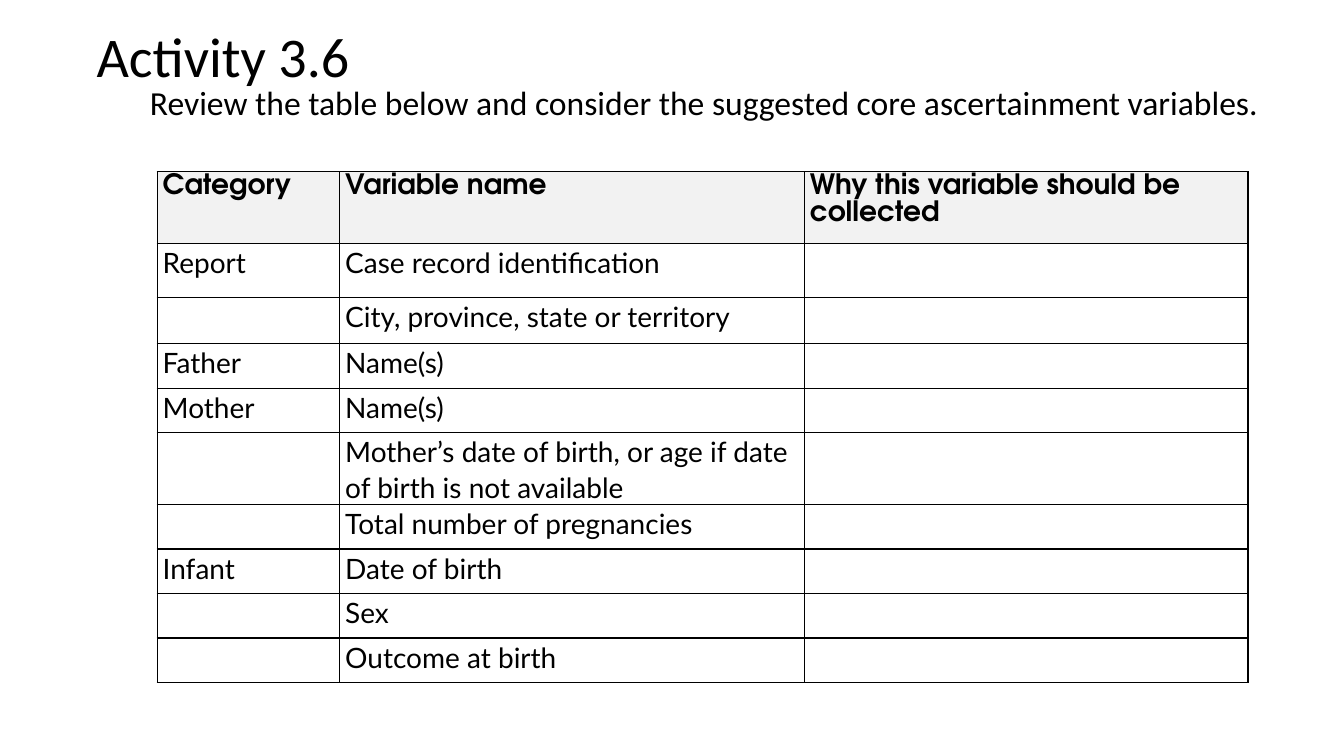
from pptx import Presentation
from pptx import util as u
from pptx.dml.color import RGBColor
from pptx.enum import text
from pptx.oxml import parse_xml
from pptx.oxml.ns import nsdecls

BODY_FONT, CELL_FONT, HEAD_FONT = "Calibri", "Lato", "TeX Gyre Adventor"
COL_WIDTHS = [4.6, 11.71, 11.18]
ROW_HEIGHTS = [0.89, 1.35, 1.17] + [1.12] * 7
HEADERS = ["Category", "Variable name", "Why this variable should be collected"]
VARIABLES = [
    ("Report", "Case record identification"),
    ("", "City, province, state or territory"),
    ("Father", "Name(s)"),
    ("Mother", "Name(s)"),
    ("", "Mother’s date of birth, or age if date of birth is not available"),
    ("", "Total number of pregnancies"),
    ("Infant", "Date of birth"),
    ("", "Sex"),
    ("", "Outcome at birth"),
]


def rgb(value):
    return RGBColor.from_string(value)


def write(tf, words, font, size, spacing, bold=False):
    p = tf.paragraphs[0]
    p.alignment = text.PP_ALIGN.LEFT
    p.line_spacing = spacing
    r = p.add_run()
    r.text = words
    r.font.name, r.font.size, r.font.bold = font, u.Pt(size), bold
    r.font.color.rgb = rgb("000000")
    return p


def set_borders(cell, color="000000", width=1):
    tc_pr = cell._tc.get_or_add_tcPr()
    for i, side in enumerate(("lnL", "lnR", "lnT", "lnB")):
        tc_pr.insert(i, parse_xml(
            f'<a:{side} {nsdecls("a")} w="{u.Pt(width)}"><a:solidFill>'
            f'<a:srgbClr val="{color}"/></a:solidFill></a:{side}>'))


def fill_cell(cell, words, header):
    cell.fill.solid()
    cell.fill.fore_color.rgb = rgb("F2F2F2" if header else "FFFFFF")
    set_borders(cell)
    if words:
        cell.margin_left = cell.margin_right = 0
        cell.margin_top = cell.margin_bottom = 0
        font = HEAD_FONT if header else CELL_FONT
        p = write(cell.text_frame, words, font, 20, 1.07, header)
        p._p.get_or_add_pPr().set("marL", str(u.Cm(0.14)))


def add_title(s, left, top, width, height):
    sp = s.shapes.title
    sp.left, sp.top, sp.width, sp.height = map(u.Cm, (left, top, width, height))
    tf = sp.text_frame
    tf.vertical_anchor = text.MSO_ANCHOR.MIDDLE
    write(tf, "Activity 3.6", BODY_FONT, 40, 0.9)


def add_instruction(s, left, top, width, height):
    sp = s.shapes.add_textbox(*map(u.Cm, (left, top, width, height)))
    tf = sp.text_frame
    tf.word_wrap = True
    write(tf, "Review the table below and consider the suggested core "
              "ascertainment variables.", BODY_FONT, 24, 0.9)


def add_variable_table(s, left, top):
    rows = [HEADERS] + [(*pair, "") for pair in VARIABLES]
    box = (left, top, sum(COL_WIDTHS), sum(ROW_HEIGHTS))
    table = s.shapes.add_table(len(rows), len(HEADERS), *map(u.Cm, box)).table
    for col, width in zip(table.columns, COL_WIDTHS):
        col.width = u.Cm(width)
    for i, (row, height) in enumerate(zip(table.rows, ROW_HEIGHTS)):
        row.height = u.Cm(height)
        for cell, words in zip(row.cells, rows[i]):
            fill_cell(cell, words, header=i == 0)


def main():
    prs = Presentation()
    prs.slide_width, prs.slide_height = u.Cm(33.87), u.Cm(19.05)
    s = prs.slides.add_slide(prs.slide_layouts[5])
    # Heading and instruction
    add_title(s, 2.18, 0.2, 29.2, 2.6)
    add_instruction(s, 3.53, 2.06, 29.97, 1.3)
    # Core variables with a blank column for the answers
    add_variable_table(s, 3.96, 4.33)
    prs.save("out.pptx")


if __name__ == "__main__":
    main()
